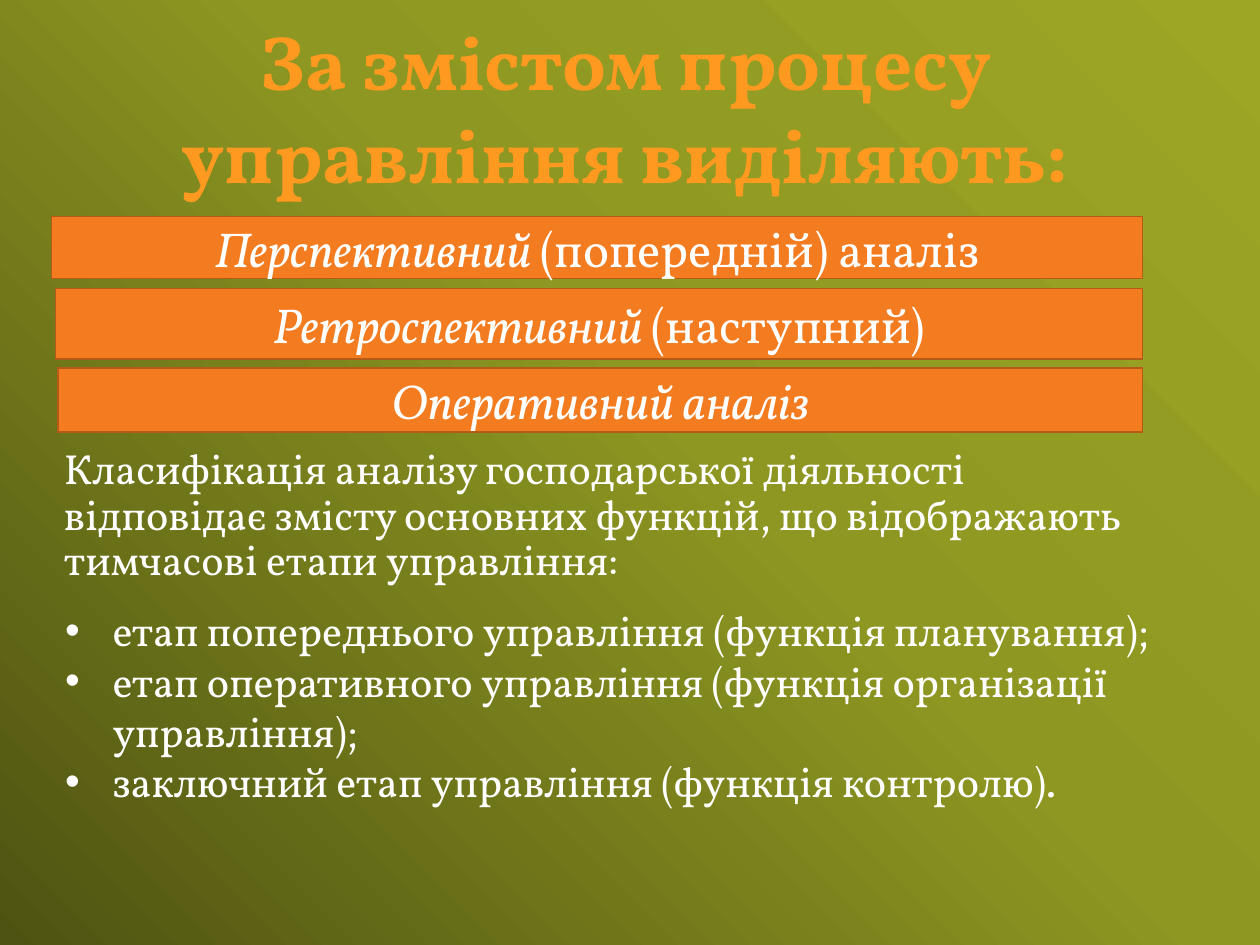
from copy import deepcopy

from lxml import etree
from pptx import Presentation
from pptx.dml.color import RGBColor
from pptx.enum import shapes, text
from pptx.oxml import ns
from pptx.util import Pt

FONT = "Vollkorn"
WHITE = RGBColor(0xFF, 0xFF, 0xFF)
TITLE_ORANGE = RGBColor(0xFF, 0x99, 0x20)
BAR_ORANGE = RGBColor(0xF3, 0x7B, 0x20)
BAR_EDGE = RGBColor(0xB4, 0x5B, 0x18)
BACKGROUND_STOPS = [
    (0, RGBColor(0x9D, 0xA6, 0x25)),
    (0.45, RGBColor(0x8E, 0x97, 0x21)),
    (1, RGBColor(0x4E, 0x53, 0x12)),
]

TITLE = "За змістом процесу управління виділяють:"
BAR_RIGHT = 653
# left, top, height, italic words, upright words
BARS = [
    (29.5, 123.8, 35.3, "Перспективний ", "(попередній) аналіз"),
    (31.7, 164.9, 40.3, "Ретроспективний ", "(наступний)"),
    (33.1, 210.2, 36.7, "Оперативний аналіз", ""),
]
INTRO = ("Класифікація аналізу господарської діяльності відповідає змісту "
         "основних функцій, що відображають тимчасові етапи управління:")
STAGES = [
    "етап попереднього управління (функція планування);",
    "етап оперативного управління (функція організації управління);",
    "заключний етап управління (функція контролю).",
]


def paint_background(slide):
    fill = slide.background.fill
    fill.gradient()
    fill.gradient_angle = 225
    stop_list = slide.element.find(".//" + ns.qn("a:gsLst"))
    stop_list.append(deepcopy(stop_list[-1]))
    for stop, (position, color) in zip(fill.gradient_stops, BACKGROUND_STOPS):
        stop.position = position
        stop.color.rgb = color


def add_bullet(paragraph, indent=27):
    properties = paragraph._p.get_or_add_pPr()
    properties.set("marL", str(Pt(indent)))
    properties.set("indent", str(-Pt(indent)))
    etree.SubElement(properties, ns.qn("a:buFont"), typeface="Arial")
    etree.SubElement(properties, ns.qn("a:buChar"), char="•")


def write(frame, paragraphs, size=24, color=WHITE, bold=False,
          align=text.PP_ALIGN.LEFT, spacing=None, bullets=False):
    """Fill a frame; each paragraph is a list of (words, italic) pairs."""
    frame.word_wrap = True
    for number, pieces in enumerate(paragraphs):
        paragraph = frame.add_paragraph() if number else frame.paragraphs[0]
        paragraph.alignment = align
        if spacing:
            paragraph.line_spacing = spacing
        if bullets:
            add_bullet(paragraph)
        for words, italic in pieces:
            run = paragraph.add_run()
            run.text = words
            run.font.name = FONT
            run.font.size = Pt(size)
            run.font.bold = bold
            run.font.italic = italic
            run.font.color.rgb = color


def add_text(slide, left, top, width, height, paragraphs, **style):
    box = slide.shapes.add_textbox(Pt(left), Pt(top), Pt(width), Pt(height))
    write(box.text_frame, [[(words, False)] for words in paragraphs], **style)


def add_bar(slide, left, top, height, italic_words, upright_words):
    bar = slide.shapes.add_shape(
        shapes.MSO_SHAPE.RECTANGLE,
        Pt(left), Pt(top), Pt(BAR_RIGHT - left), Pt(height))
    bar.shadow.inherit = False
    bar.fill.solid()
    bar.fill.fore_color.rgb = BAR_ORANGE
    bar.line.color.rgb = BAR_EDGE
    bar.line.width = Pt(0.85)
    bar.text_frame.vertical_anchor = text.MSO_ANCHOR.MIDDLE
    pieces = [(italic_words, True)]
    if upright_words:
        pieces.append((upright_words, False))
    write(bar.text_frame, [pieces], size=28, align=text.PP_ALIGN.CENTER)


def main():
    deck = Presentation()
    deck.slide_width, deck.slide_height = Pt(720), Pt(540)
    slide = deck.slides.add_slide(deck.slide_layouts[6])
    paint_background(slide)

    # Heading
    add_text(slide, 25.2, 4.3, 664.6, 113.8, [TITLE], size=44,
             color=TITLE_ORANGE, bold=True, align=text.PP_ALIGN.CENTER)

    # Kinds of analysis
    for bar in BARS:
        add_bar(slide, *bar)

    # Explanation and management stages
    add_text(slide, 29.5, 252.7, 623.5, 112.3, [INTRO], spacing=0.9)
    add_text(slide, 30.2, 342, 656.6, 149.8, STAGES, bullets=True)

    deck.save("out.pptx")


if __name__ == "__main__":
    main()
